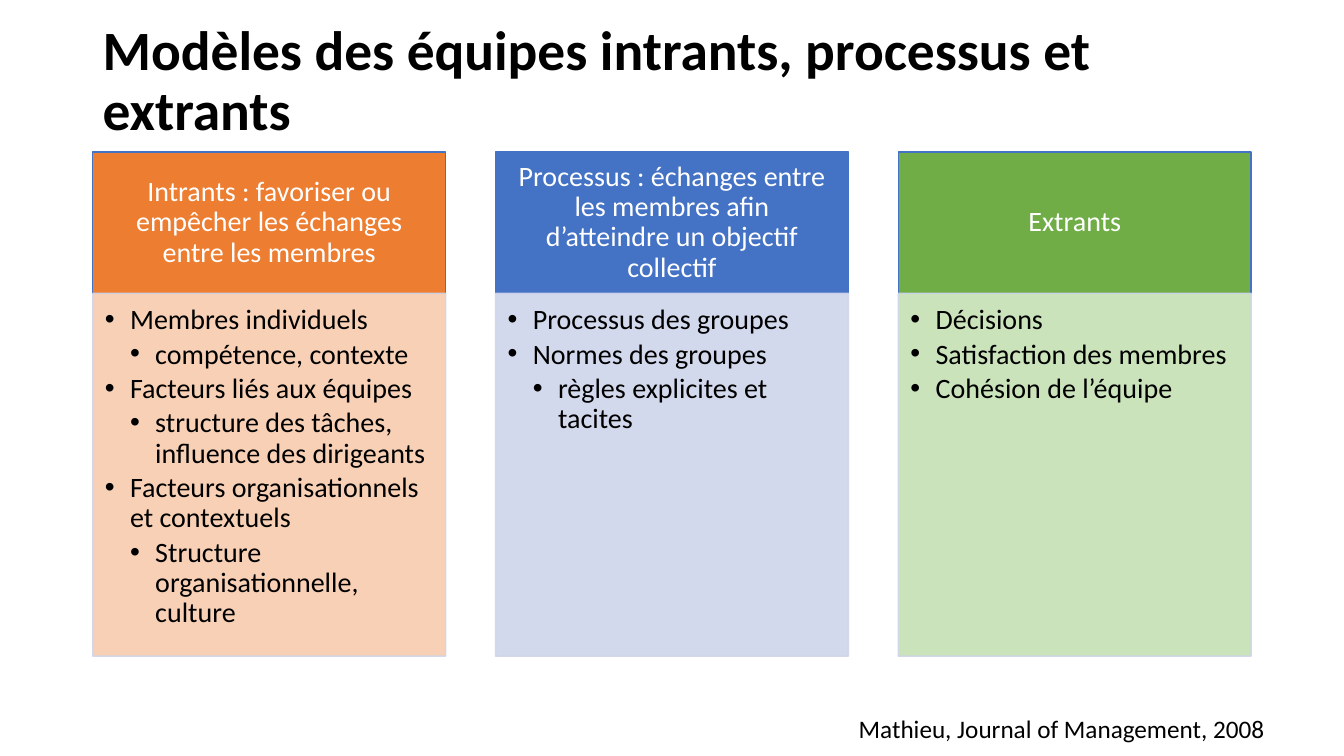
"""Build a slide of three columns: team inputs, processes and outputs."""
from lxml import etree
from pptx import Presentation, util as u
from pptx.dml.color import RGBColor
from pptx.enum import shapes, text
from pptx.oxml.ns import qn

INK = {"black": "000000", "white": "FFFFFF", "blue": "4472C4", "pale": "CFD5EA",
       "orange": "ED7D31", "peach": "F8CBAD", "green": "70AD47", "mint": "C5E0B4"}
COLUMNS = [
    ("orange", "peach", "Intrants : favoriser ou empêcher les échanges entre les membres",
     [(0, "Membres individuels"), (1, "compétence, contexte"),
      (0, "Facteurs liés aux équipes"),
      (1, "structure des tâches, influence des dirigeants"),
      (0, "Facteurs organisationnels et contextuels"),
      (1, "Structure organisationnelle, culture")]),
    ("blue", "pale",
     "Processus : échanges entre les membres afin d’atteindre un objectif collectif",
     [(0, "Processus des groupes"), (0, "Normes des groupes"),
      (1, "règles explicites et tacites")]),
    ("green", "mint", "Extrants",
     [(0, "Décisions"), (0, "Satisfaction des membres"), (0, "Cohésion de l’équipe")]),
]
LEFT, TOP, WIDE, STEP = 0.92, 1.51, 3.5, 3.995
HEAD, BODY = 1.4, 3.6

deck = Presentation()
deck.slide_width, deck.slide_height = u.Inches(13.33), u.Inches(7.5)
slide = deck.slides.add_slide(deck.slide_layouts[6])


def write(para, words, size, ink="black", bold=False):
    run = para.add_run()
    run.text = words
    run.font.name = "Calibri"
    run.font.size = u.Pt(size)
    run.font.bold = bold
    run.font.color.rgb = RGBColor.from_string(INK[ink])


def panel(left, top, high, fill, line, pads):
    box = slide.shapes.add_shape(shapes.MSO_SHAPE.RECTANGLE, u.Inches(left),
                                 u.Inches(top), u.Inches(WIDE), u.Inches(high))
    box.shadow.inherit = False
    box.fill.solid()
    box.fill.fore_color.rgb = RGBColor.from_string(INK[fill])
    box.line.color.rgb = RGBColor.from_string(INK[line])
    box.line.width = u.Pt(1)
    frame = box.text_frame
    frame.word_wrap = True
    (frame.margin_left, frame.margin_top,
     frame.margin_right, frame.margin_bottom) = map(u.Inches, pads)
    return box


title = slide.shapes.add_textbox(u.Inches(LEFT), u.Inches(0.4),
                                 u.Inches(11.5), u.Inches(1.45)).text_frame
title.word_wrap = True
title.vertical_anchor = text.MSO_ANCHOR.MIDDLE
title.margin_bottom = u.Inches(0.66)
title.paragraphs[0].line_spacing = 0.9
write(title.paragraphs[0], "Modèles des équipes intrants, processus et extrants",
      39.6, bold=True)

for col, (dark, light, label, items) in enumerate(COLUMNS):
    left = LEFT + col * STEP
    head = panel(left, TOP, HEAD, dark, "blue", (0.16, 0.09, 0.16, 0.09)).text_frame
    head.vertical_anchor = text.MSO_ANCHOR.MIDDLE
    para = head.paragraphs[0]
    para.alignment = text.PP_ALIGN.CENTER
    para.line_spacing = 0.9
    write(para, label, 20, "white")

    body = panel(left, TOP + HEAD, BODY, light, "pale", (0.12, 0.12, 0.16, 0.17))
    for tint in body._element.spPr.iter(qn("a:srgbClr")):
        etree.SubElement(tint, qn("a:alpha"), val="90000")
    frame = body.text_frame
    frame.vertical_anchor = text.MSO_ANCHOR.TOP
    for row, (level, words) in enumerate(items):
        para = frame.add_paragraph() if row else frame.paragraphs[0]
        para.level = level
        para.alignment = text.PP_ALIGN.LEFT
        para.line_spacing = 0.9
        para.space_after = u.Pt(3)
        props = para._p.get_or_add_pPr()
        props.set("marL", str(u.Inches(0.25 * (level + 1))))
        props.set("indent", str(u.Inches(-0.25)))
        etree.SubElement(props, qn("a:buFont"), typeface="Arial")
        etree.SubElement(props, qn("a:buChar"), char="•")
        write(para, words, 20)

credit = slide.shapes.add_textbox(u.Inches(6.67), u.Inches(7.03),
                                  u.Inches(5.97), u.Inches(0.4)).text_frame
credit.word_wrap = True
credit.auto_size = text.MSO_AUTO_SIZE.SHAPE_TO_FIT_TEXT
credit.paragraphs[0].alignment = text.PP_ALIGN.RIGHT
write(credit.paragraphs[0], "Mathieu, Journal of Management, 2008", 18)

deck.save("out.pptx")
